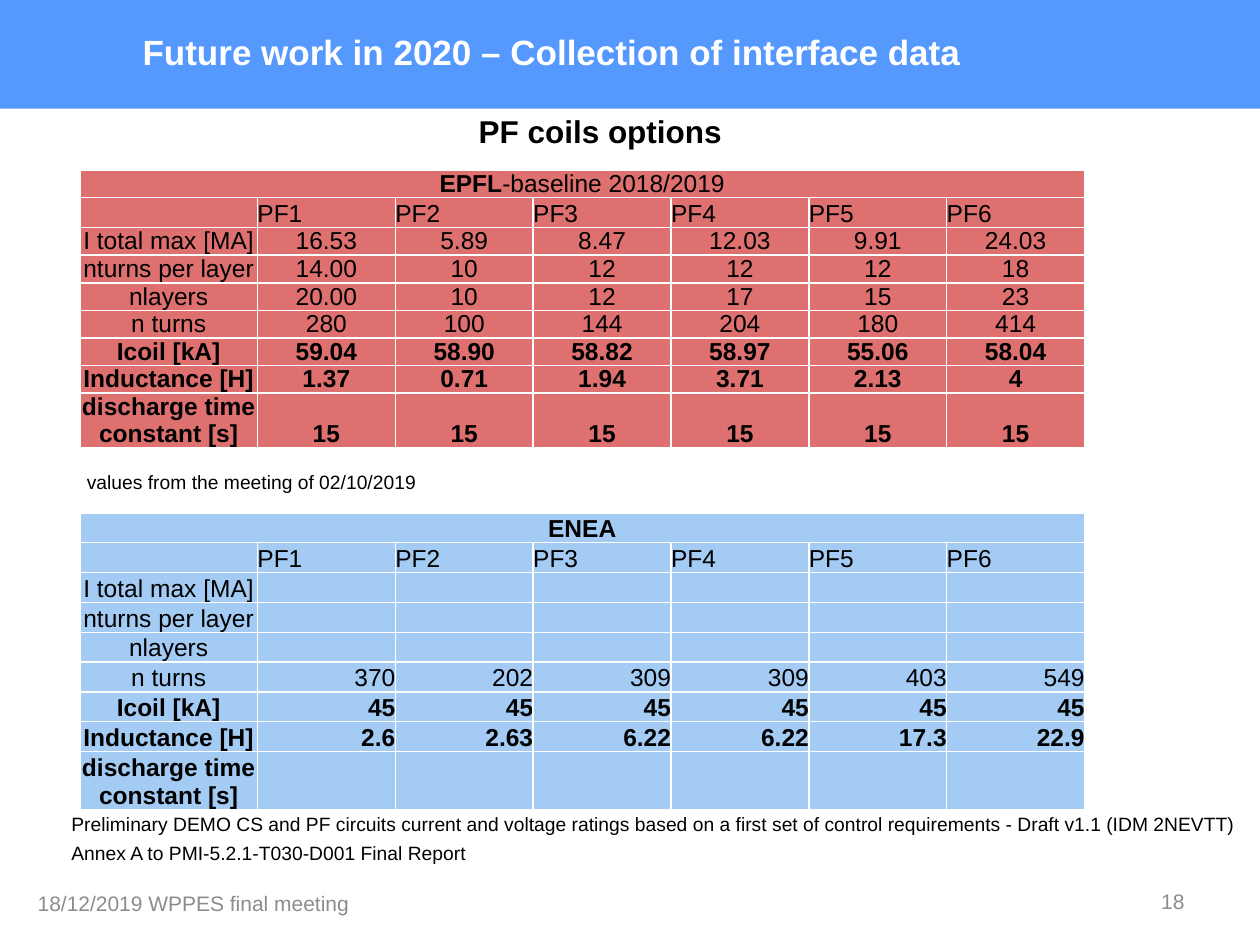
"""Build the slide comparing the PF coil options of EPFL and ENEA."""
import pptx
import pptx.dml.color
import pptx.enum.shapes
import pptx.enum.text
import pptx.oxml
import pptx.oxml.ns
import pptx.util
from pptx.util import Cm

FONT = "Arial"
WHITE = pptx.dml.color.RGBColor(0xFF, 0xFF, 0xFF)
BLACK = pptx.dml.color.RGBColor(0x00, 0x00, 0x00)
GRAY = pptx.dml.color.RGBColor(0x8C, 0x8C, 0x8C)
BAND_BLUE = pptx.dml.color.RGBColor(0x55, 0x99, 0xFF)
EPFL_RED = pptx.dml.color.RGBColor(0xDE, 0x70, 0x70)
ENEA_BLUE = pptx.dml.color.RGBColor(0xA3, 0xCB, 0xF3)

LEFT = pptx.enum.text.PP_ALIGN.LEFT
CENTER = pptx.enum.text.PP_ALIGN.CENTER
RIGHT = pptx.enum.text.PP_ALIGN.RIGHT
TOP = pptx.enum.text.MSO_ANCHOR.TOP
MIDDLE = pptx.enum.text.MSO_ANCHOR.MIDDLE
BOTTOM = pptx.enum.text.MSO_ANCHOR.BOTTOM

TITLE = "Future work in 2020 – Collection of interface data"
COILS = ["PF1", "PF2", "PF3", "PF4", "PF5", "PF6"]
QUANTITIES = [
    "I total max [MA]", "nturns per layer", "nlayers", "n turns",
    "Icoil [kA]", "Inductance [H]", "discharge time constant [s]",
]
FIRST_BOLD_ROW = 2 + QUANTITIES.index("Icoil [kA]")
BLANK = [""] * len(COILS)

OPTIONS = [
    {
        "lab": "EPFL", "detail": "-baseline 2018/2019", "color": EPFL_RED,
        "top": 3.43, "row": 0.55, "last_row": 1.11, "align": CENTER,
        "values": [
            ["16.53", "5.89", "8.47", "12.03", "9.91", "24.03"],
            ["14.00", "10", "12", "12", "12", "18"],
            ["20.00", "10", "12", "17", "15", "23"],
            ["280", "100", "144", "204", "180", "414"],
            ["59.04", "58.90", "58.82", "58.97", "55.06", "58.04"],
            ["1.37", "0.71", "1.94", "3.71", "2.13", "4"],
            ["15"] * len(COILS),
        ],
    },
    {
        "lab": "ENEA", "detail": "", "color": ENEA_BLUE,
        "top": 10.34, "row": 0.6, "last_row": 1.17, "align": RIGHT,
        "values": [
            BLANK, BLANK, BLANK,
            ["370", "202", "309", "309", "403", "549"],
            ["45"] * len(COILS),
            ["2.6", "2.63", "6.22", "6.22", "17.3", "22.9"],
            BLANK,
        ],
    },
]
TABLE_LEFT, LABEL_WIDTH, COIL_WIDTH = 1.61, 3.58, 2.78

CAPTIONS = [
    ("18/12/2019 WPPES final meeting", (0.51, 17.7, 7.92, 1.02), 12, GRAY, False, LEFT, MIDDLE),
    ("18", (18.21, 17.65, 5.92, 1.02), 12, GRAY, False, RIGHT, MIDDLE),
    ("values from the meeting of 02/10/2019", (1.5, 9.35, 7.19, 0.74), 11, BLACK, False, LEFT, TOP),
    ("PF coils options", (9.4, 2.13, 5.64, 1.02), 18, BLACK, True, LEFT, TOP),
    ("Preliminary DEMO CS and PF circuits current and voltage ratings based on a first set of "
     "control requirements - Draft v1.1 (IDM 2NEVTT)",
     (1.19, 16.26, 24.2, 0.74), 11, BLACK, False, LEFT, TOP),
    ("Annex A to PMI-5.2.1-T030-D001 Final Report", (1.19, 16.84, 9.02, 0.74), 11, BLACK, False, LEFT, TOP),
]


def style(run, size, color, bold):
    run.font.name = FONT
    run.font.size = pptx.util.Pt(size)
    run.font.color.rgb = color
    run.font.bold = bold


def add_caption(slide, text, box, size, color, bold, align, anchor):
    frame = slide.shapes.add_textbox(*map(Cm, box)).text_frame
    frame.word_wrap = True
    frame.vertical_anchor = anchor
    frame.text = text
    frame.paragraphs[0].alignment = align
    style(frame.paragraphs[0].runs[0], size, color, bold)


def add_borders(cell):
    properties = cell._tc.get_or_add_tcPr()
    for position, side in enumerate(("lnL", "lnR", "lnT", "lnB")):
        properties.insert(position, pptx.oxml.parse_xml(
            f'<a:{side} {pptx.oxml.ns.nsdecls("a")} w="12700"><a:solidFill>'
            f'<a:srgbClr val="{WHITE}"/></a:solidFill></a:{side}>'))


def fill_cell(cell, text, align, bold, color):
    cell.margin_left = cell.margin_right = cell.margin_top = cell.margin_bottom = 0
    cell.vertical_anchor = BOTTOM
    cell.fill.solid()
    cell.fill.fore_color.rgb = color
    add_borders(cell)
    paragraph = cell.text_frame.paragraphs[0]
    paragraph.alignment = align
    if text:
        paragraph.text = text
        style(paragraph.runs[0], 14, BLACK, bold)
    else:
        paragraph._p.append(pptx.oxml.parse_xml(
            f'<a:endParaRPr {pptx.oxml.ns.nsdecls("a")} sz="1400"/>'))


def add_option(slide, option):
    rows = [[option["lab"]] + BLANK, [""] + COILS]
    rows += [[name] + values for name, values in zip(QUANTITIES, option["values"])]
    heights = [option["row"]] * (len(rows) - 1) + [option["last_row"]]
    widths = [LABEL_WIDTH] + [COIL_WIDTH] * len(COILS)
    table = slide.shapes.add_table(
        len(rows), len(widths), Cm(TABLE_LEFT), Cm(option["top"]),
        Cm(sum(widths)), Cm(sum(heights))).table
    for column, width in zip(table.columns, widths):
        column.width = Cm(width)
    for r, (row, height) in enumerate(zip(rows, heights)):
        table.rows[r].height = Cm(height)
        for c, text in enumerate(row):
            if r == 1:
                align = LEFT
            else:
                align = option["align"] if r and c else CENTER
            bold = r == 0 or r >= FIRST_BOLD_ROW
            fill_cell(table.cell(r, c), text, align, bold, option["color"])
    heading = table.cell(0, 0)
    heading.merge(table.cell(0, len(COILS)))
    if option["detail"]:
        detail = heading.text_frame.paragraphs[0].add_run()
        detail.text = option["detail"]
        style(detail, 14, BLACK, False)


def add_header(slide, width):
    title = slide.shapes.title
    title.left, title.top, title.width, title.height = map(Cm, (2.62, 0.13, 20.09, 1.8))
    title.text_frame.text = TITLE
    title.text_frame.vertical_anchor = MIDDLE
    title.text_frame.paragraphs[0].alignment = LEFT
    style(title.text_frame.paragraphs[0].runs[0], 20, WHITE, True)
    band = slide.shapes.add_shape(
        pptx.enum.shapes.MSO_SHAPE.RECTANGLE, 0, 0, width, Cm(2.19))
    band.shadow.inherit = False
    band.fill.solid()
    band.fill.fore_color.rgb = BAND_BLUE
    band.line.fill.background()
    title.element.addprevious(band.element)


def main():
    deck = pptx.Presentation()
    deck.slide_width, deck.slide_height = Cm(25.4), Cm(19.05)
    slide = deck.slides.add_slide(deck.slide_layouts[5])
    add_header(slide, deck.slide_width)
    for option in OPTIONS:
        add_option(slide, option)
    for caption in CAPTIONS:
        add_caption(slide, *caption)
    deck.save("out.pptx")


if __name__ == "__main__":
    main()
